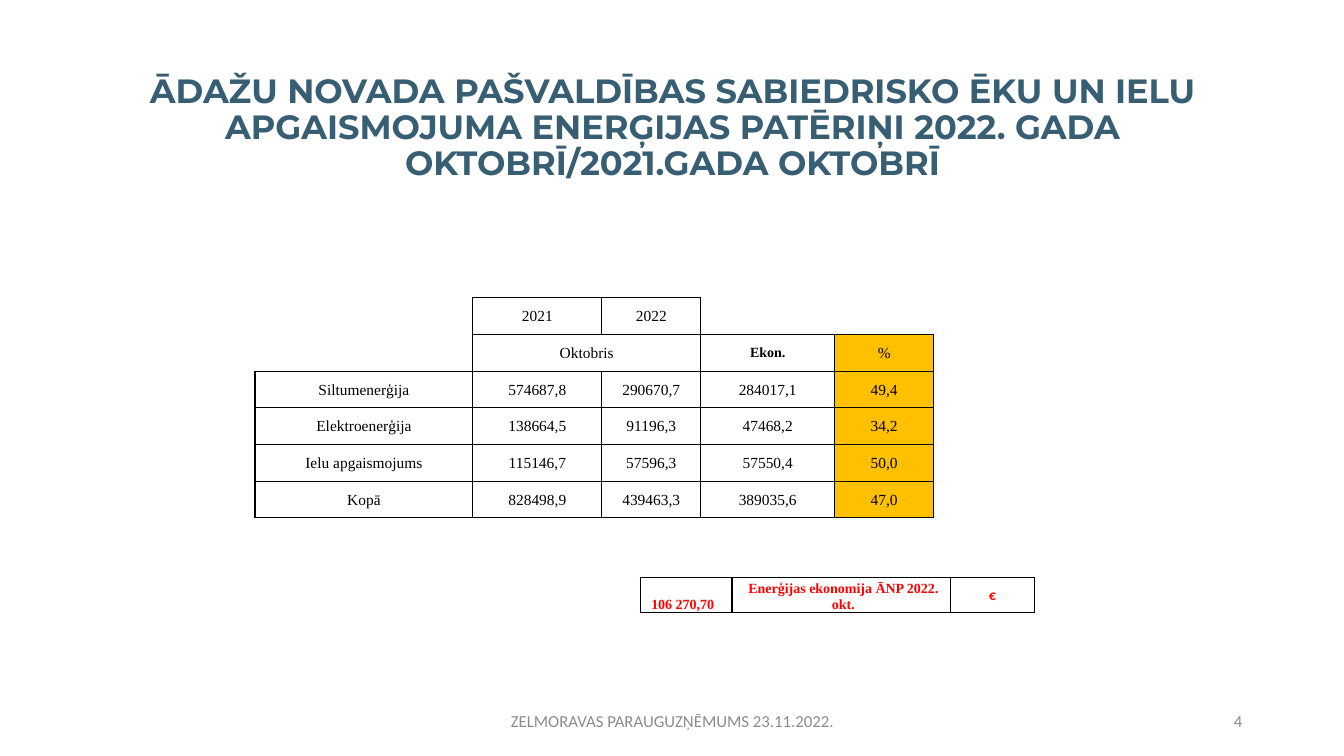
import pptx
import pptx.util
import pptx.dml.color
import pptx.enum.text
import pptx.oxml
import pptx.oxml.ns

Inches = pptx.util.Inches
RGBColor = pptx.dml.color.RGBColor
ALIGN = pptx.enum.text.PP_ALIGN
ANCHOR = pptx.enum.text.MSO_ANCHOR

BLACK = RGBColor(0x00, 0x00, 0x00)
RED = RGBColor(0xFF, 0x00, 0x00)
AMBER = RGBColor(0xFF, 0xC0, 0x00)
TEAL = RGBColor(0x37, 0x5E, 0x72)
GREY = RGBColor(0x8C, 0x8C, 0x8C)

CONSUMPTION = [
    ("Siltumenerģija", "574687,8", "290670,7", "284017,1", "49,4"),
    ("Elektroenerģija", "138664,5", "91196,3", "47468,2", "34,2"),
    ("Ielu apgaismojums", "115146,7", "57596,3", "57550,4", "50,0"),
    ("Kopā", "828498,9", "439463,3", "389035,6", "47,0"),
]


def write_text(frame, text, size=11, font="Times New Roman", color=BLACK,
               bold=False, align=ALIGN.CENTER, spacing=1.0):
    paragraph = frame.paragraphs[0]
    paragraph.alignment = align
    paragraph.line_spacing = spacing
    run = paragraph.add_run()
    run.text = text
    run.font.size = pptx.util.Pt(size)
    run.font.name = font
    run.font.color.rgb = color
    run.font.bold = bold


def draw_borders(cell, sides):
    properties = cell._tc.get_or_add_tcPr()
    for index, side in enumerate("LRTB"):
        if side in sides:
            content = f'<a:solidFill><a:srgbClr val="{BLACK}"/></a:solidFill>'
        else:
            content = "<a:noFill/>"
        properties.insert(index, pptx.oxml.parse_xml(
            f'<a:ln{side} {pptx.oxml.ns.nsdecls("a")} w="12700">{content}</a:ln{side}>'))


def add_grid(slide, left, top, widths, heights, entries):
    table = slide.shapes.add_table(
        len(heights), len(widths), Inches(left), Inches(top),
        Inches(sum(widths)), Inches(sum(heights))).table
    table.first_row = False
    table.horz_banding = False
    for column, width in zip(table.columns, widths):
        column.width = Inches(width)
    for row, height in zip(table.rows, heights):
        row.height = Inches(height)

    boxed = {(row, column + offset)
             for row, column, span, *_ in entries for offset in range(span)}
    for row in range(len(heights)):
        for column in range(len(widths)):
            cell = table.cell(row, column)
            cell.margin_left = cell.margin_right = cell.margin_top = Inches(0.01)
            cell.margin_bottom = 0
            cell.vertical_anchor = ANCHOR.MIDDLE
            cell.fill.background()
            neighbours = {"L": (row, column - 1), "R": (row, column + 1),
                          "T": (row - 1, column), "B": (row + 1, column)}
            draw_borders(cell, [side for side, place in neighbours.items()
                                if (row, column) in boxed or place in boxed])
            if (row, column) not in boxed:
                cell.text_frame.paragraphs[0]._p.append(pptx.oxml.parse_xml(
                    f'<a:endParaRPr {pptx.oxml.ns.nsdecls("a")} sz="1000"/>'))

    for row, column, span, text, style in entries:
        cell = table.cell(row, column)
        if span > 1:
            cell.merge(table.cell(row, column + span - 1))
        write_text(cell.text_frame, text, **style)
    return table


def add_heading(slide, left, top, width, height):
    heading = slide.shapes.title
    heading.left, heading.top = Inches(left), Inches(top)
    heading.width, heading.height = Inches(width), Inches(height)
    frame = heading.text_frame
    frame.word_wrap = True
    frame.auto_size = pptx.enum.text.MSO_AUTO_SIZE.NONE
    frame.vertical_anchor = ANCHOR.MIDDLE
    write_text(frame, "ĀDAŽU NOVADA PAŠVALDĪBAS SABIEDRISKO ĒKU UN IELU "
               "APGAISMOJUMA ENERĢIJAS PATĒRIŅI 2022. GADA "
               "OKTOBRĪ/2021.GADA OKTOBRĪ",
               size=24, font="Montserrat", color=TEAL, bold=True, spacing=0.9)


def add_consumption(slide, left, top):
    entries = [
        (1, 2, 1, "2021", {}),
        (1, 3, 1, "2022", {}),
        (2, 2, 2, "Oktobris", {}),
        (2, 4, 1, "Ekon.", {"size": 10, "bold": True}),
        (2, 5, 1, "%", {}),
    ]
    for row, (label, *values) in enumerate(CONSUMPTION, start=3):
        entries.append((row, 0, 2, label, {}))
        entries += [(row, column, 1, value, {})
                    for column, value in enumerate(values, start=2)]
    widths = [0.98, 1.18, 1.28, 0.98, 1.33, 0.98, 0.98]
    table = add_grid(slide, left, top, widths, [0.364] * 7, entries)
    for row in range(2, 7):
        percentage = table.cell(row, 5)
        percentage.fill.solid()
        percentage.fill.fore_color.rgb = AMBER


def add_savings(slide, left, top):
    red_bold = {"size": 10, "color": RED, "bold": True}
    entries = [
        (1, 1, 1, "106 270,70", {**red_bold, "align": ALIGN.LEFT}),
        (1, 2, 3, "Enerģijas ekonomija ĀNP 2022. okt.", red_bold),
        (1, 5, 1, "€", {**red_bold, "font": "Calibri"}),
    ]
    widths = [0.67, 0.91, 0.67, 0.67, 0.83, 0.83, 0.67]
    table = add_grid(slide, left, top, widths, [0.22, 0.32, 0.22], entries)
    amount, description = table.cell(1, 1), table.cell(1, 2)
    amount.margin_left = Inches(0.11)
    description.margin_left, description.margin_right = Inches(0.08), Inches(0.04)
    amount.vertical_anchor = description.vertical_anchor = ANCHOR.BOTTOM


def add_footer_text(slide, left, top, width, height, text, align):
    footer = slide.shapes.add_textbox(
        Inches(left), Inches(top), Inches(width), Inches(height))
    footer.text_frame.word_wrap = True
    footer.text_frame.vertical_anchor = ANCHOR.MIDDLE
    write_text(footer.text_frame, text, size=12, font="Calibri",
               color=GREY, align=align)


def main():
    presentation = pptx.Presentation()
    presentation.slide_width = Inches(13.33)
    presentation.slide_height = Inches(7.5)
    slide = presentation.slides.add_slide(presentation.slide_layouts[5])
    add_heading(slide, 0.92, 0.55, 11.5, 1.45)
    add_footer_text(slide, 4.42, 6.95, 4.5, 0.4,
                    "ZELMORAVAS PARAUGUZŅĒMUMS 23.11.2022.", ALIGN.CENTER)
    add_footer_text(slide, 9.42, 6.95, 3, 0.4, "4", ALIGN.RIGHT)
    add_consumption(slide, 2.53, 2.59)
    add_savings(slide, 5.68, 5.51)
    presentation.save("out.pptx")


if __name__ == "__main__":
    main()
